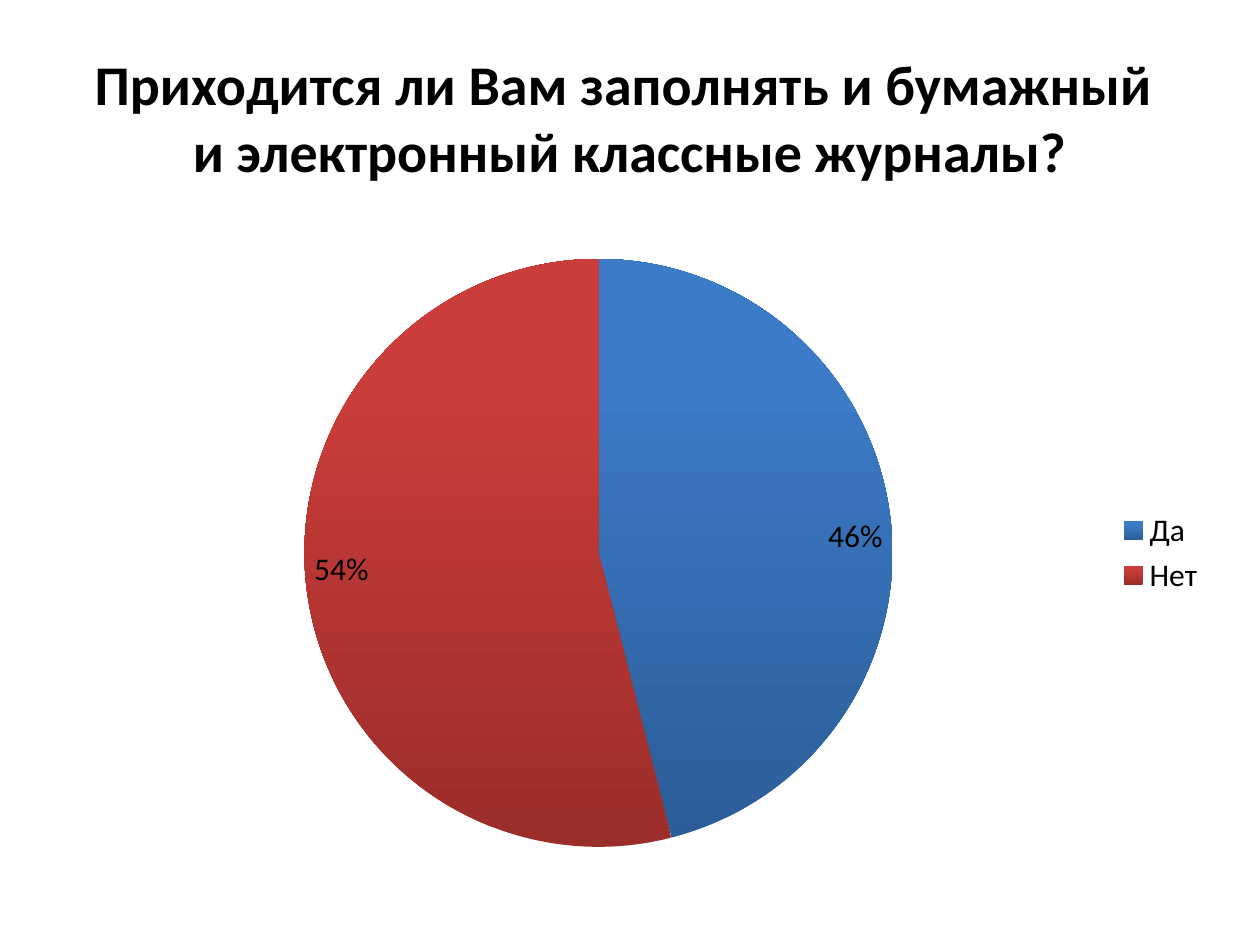
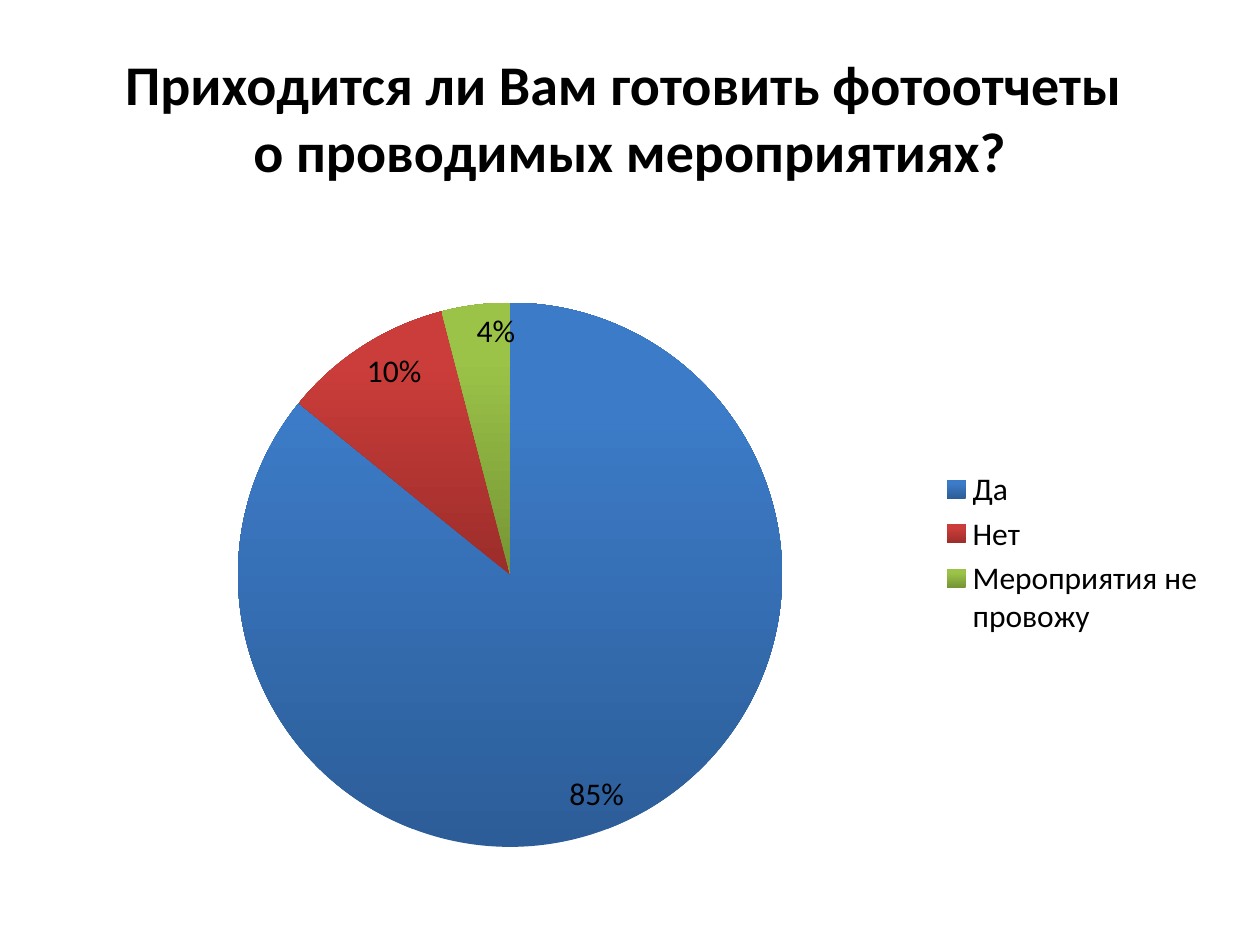
from lxml import etree
from pptx import Presentation
from pptx.chart import data as cd
from pptx.dml.color import RGBColor
from pptx.enum import chart as ce, text
from pptx.oxml import ns
from pptx.util import Pt

FONT = "Calibri"
BLACK = RGBColor(0, 0, 0)
SLICE_GRADIENTS = [
    (RGBColor(0x2C, 0x5D, 0x98), RGBColor(0x3C, 0x7B, 0xC7)),
    (RGBColor(0x9B, 0x2D, 0x2A), RGBColor(0xCB, 0x3D, 0x3A)),
    (RGBColor(0x76, 0x95, 0x35), RGBColor(0x9B, 0xC3, 0x48)),
]
CHART_LEFT, CHART_TOP, CHART_WIDTH, CHART_HEIGHT = 48, 138, 648, 356
PIE_BOTTOM = 484

QUESTIONS = [
    dict(title="Приходится ли Вам заполнять и бумажный \vи электронный классные журналы?",
         answers={"Да": 46, "Нет": 54}, left=174, diameter=336),
    dict(title="Приходится ли Вам готовить фотоотчеты \vо проводимых мероприятиях?",
         answers={"Да": 85, "Нет": 10, "Мероприятия не провожу": 4}, left=136, diameter=311),
]


def set_font(font, size, bold=False):
    font.name, font.size, font.bold = FONT, Pt(size), bold
    font.color.rgb = BLACK


def set_title(s, title, size=32, bold=True):
    sp = s.shapes.title
    sp.left, sp.top, sp.width, sp.height = Pt(0), Pt(21.6), Pt(720), Pt(90)
    tf = sp.text_frame
    tf.text = title
    tf.vertical_anchor = text.MSO_ANCHOR.MIDDLE
    p = tf.paragraphs[0]
    p.alignment = text.PP_ALIGN.CENTER
    for r in p.runs:
        set_font(r.font, size, bold)


def place_pie(chart, left, diameter):
    area = chart.plots[0]._element.getparent()
    for old in area.findall(ns.qn("c:layout")):
        area.remove(old)
    layout = etree.Element(ns.qn("c:layout"))
    area.insert(0, layout)
    manual = etree.SubElement(layout, ns.qn("c:manualLayout"))
    settings = dict(
        layoutTarget="inner", xMode="edge", yMode="edge",
        x=(left - CHART_LEFT) / CHART_WIDTH,
        y=(PIE_BOTTOM - diameter - CHART_TOP) / CHART_HEIGHT,
        w=diameter / CHART_WIDTH, h=diameter / CHART_HEIGHT)
    for name, value in settings.items():
        etree.SubElement(manual, ns.qn("c:" + name)).set("val", str(value))


def fill_slice(point, dark, light):
    fill = point.format.fill
    fill.gradient()
    fill.gradient_angle = 90
    for stop, color, position in zip(fill.gradient_stops, (dark, light), (0, 0.8)):
        stop.color.rgb = color
        stop.position = position


def add_pie(s, answers, left, diameter):
    data = cd.CategoryChartData()
    data.categories = list(answers)
    data.add_series("Series 1", list(answers.values()))
    chart = s.shapes.add_chart(
        ce.XL_CHART_TYPE.PIE, Pt(CHART_LEFT), Pt(CHART_TOP),
        Pt(CHART_WIDTH), Pt(CHART_HEIGHT), data).chart
    set_font(chart.font, 18)
    chart.has_title = False
    chart.has_legend = True
    chart.legend.position = ce.XL_LEGEND_POSITION.RIGHT
    chart.legend.include_in_layout = False
    plot = chart.plots[0]
    plot.vary_by_categories = True
    plot.has_data_labels = True
    labels = plot.data_labels
    labels.show_value = True
    labels.number_format = '0"%"'
    labels.number_format_is_linked = False
    labels.position = ce.XL_LABEL_POSITION.INSIDE_END
    for i, (dark, light) in enumerate(SLICE_GRADIENTS[:len(answers)]):
        fill_slice(plot.series[0].points[i], dark, light)
    place_pie(chart, left, diameter)


def main():
    prs = Presentation()
    prs.slide_width, prs.slide_height = Pt(720), Pt(540)
    for question in QUESTIONS:
        s = prs.slides.add_slide(prs.slide_layouts[5])
        set_title(s, question["title"])
        add_pie(s, question["answers"], question["left"], question["diameter"])
    prs.save("out.pptx")


if __name__ == "__main__":
    main()
